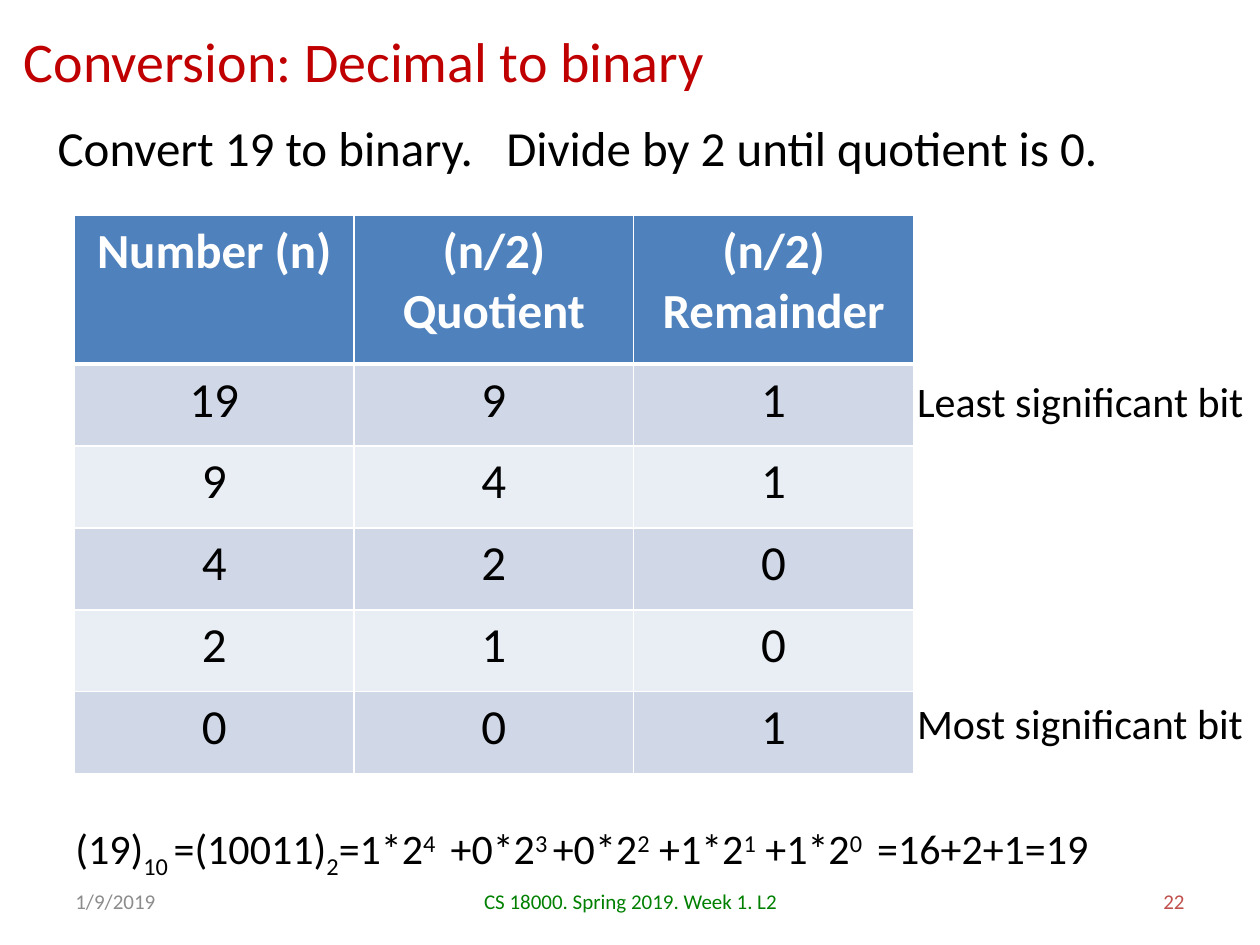
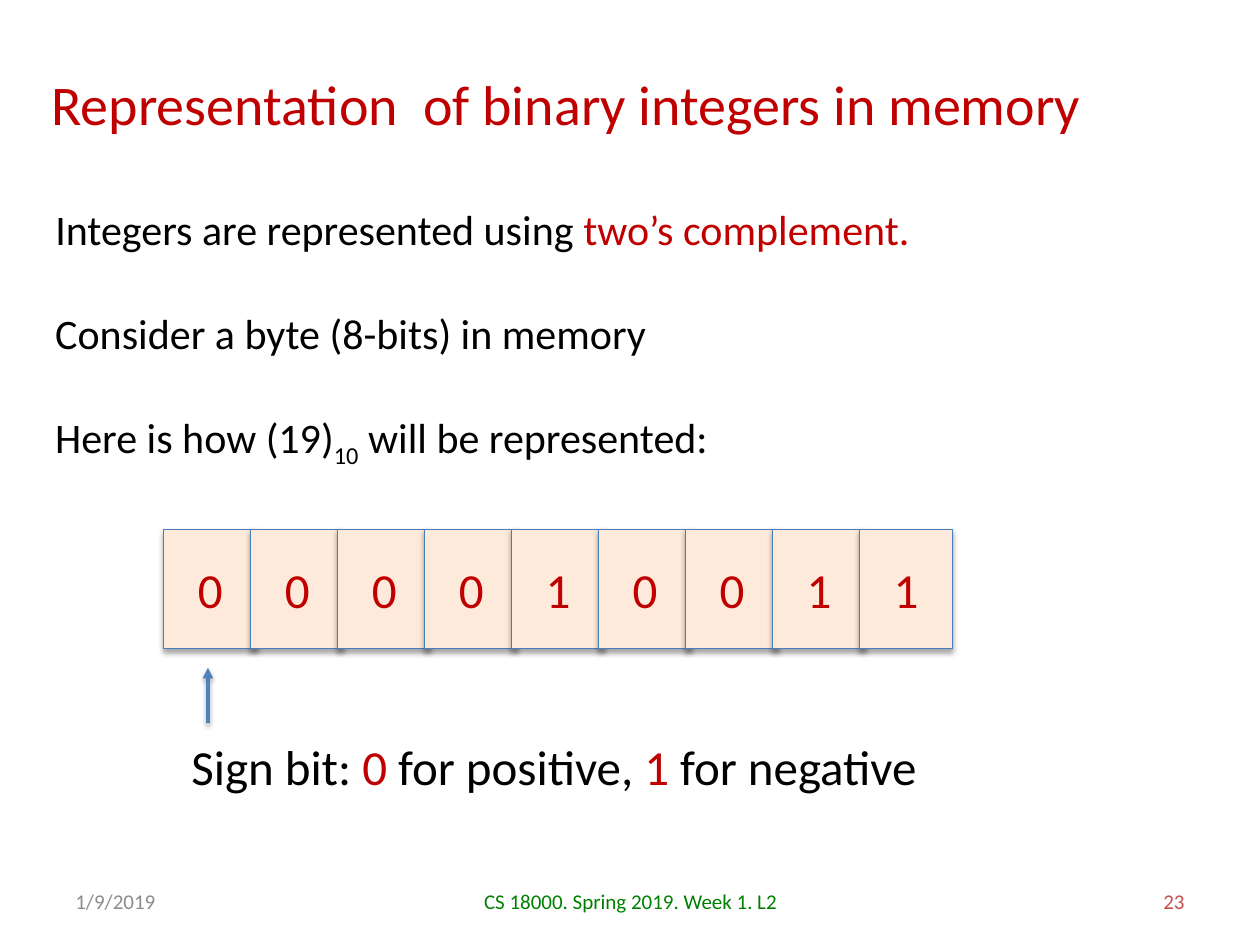
import pptx
import pptx.util
from lxml import etree
from pptx.dml.color import RGBColor
from pptx.enum.shapes import MSO_CONNECTOR, MSO_SHAPE
from pptx.enum.text import MSO_ANCHOR, MSO_AUTO_SIZE, PP_ALIGN
from pptx.oxml.ns import qn
from pptx.util import Inches

FONT = "Calibri"
BLACK = RGBColor(0x00, 0x00, 0x00)
WHITE = RGBColor(0xFF, 0xFF, 0xFF)
RED = RGBColor(0xC0, 0x00, 0x00)
GREEN = RGBColor(0x00, 0x80, 0x00)
GREY = RGBColor(0x8C, 0x8C, 0x8C)
NUMBER_RED = RGBColor(0xC0, 0x50, 0x4D)
BLUE = RGBColor(0x4F, 0x81, 0xBD)
BIT_LINE = RGBColor(0x4B, 0x7E, 0xBC)
BIT_FILL = RGBColor(0xFD, 0xEA, 0xDA)
ROW_FILLS = [RGBColor(0xD0, 0xD8, 0xE8), RGBColor(0xE9, 0xED, 0xF4)]

SUB, SUPER = {"baseline": -25}, {"baseline": 30}
DIVISION_HEADER = ["Number (n)", "(n/2)\nQuotient", "(n/2)\nRemainder"]
DIVISION_STEPS = [(19, 9, 1), (9, 4, 1), (4, 2, 0), (2, 1, 0), (0, 0, 1)]
BITS = "000010011"


def write(frame, text, size=24, color=BLACK, bold=False, align=PP_ALIGN.LEFT):
    """Fill a frame; text is a string, or a list of strings and (string, changes) pairs.

    A newline in a plain string starts a new paragraph.
    """
    lines = [[line] for line in text.split("\n")] if isinstance(text, str) else [text]
    for index, line in enumerate(lines):
        para = frame.add_paragraph() if index else frame.paragraphs[0]
        para.alignment = align
        for part in line:
            words, changes = (part, {}) if isinstance(part, str) else part
            span = para.add_run()
            span.text = words
            span.font.name = FONT
            span.font.size = pptx.util.Pt(size)
            span.font.bold = bold
            span.font.color.rgb = changes.get("color", color)
            if "baseline" in changes:
                span.font._element.set("baseline", str(changes["baseline"] * 1000))


def add_text(shapes, text, left, top, width, height, **style):
    """Add a one-line label that does not wrap."""
    box = shapes.add_textbox(Inches(left), Inches(top), Inches(width), Inches(height))
    box.text_frame.word_wrap = False
    box.text_frame.auto_size = MSO_AUTO_SIZE.SHAPE_TO_FIT_TEXT
    write(box.text_frame, text, **style)


def add_fixed_text(slide, text, left, top, width, height, **style):
    """Add a wrapping box of fixed size with its text in the middle."""
    box = slide.shapes.add_textbox(Inches(left), Inches(top), Inches(width), Inches(height))
    box.text_frame.word_wrap = True
    box.text_frame.vertical_anchor = MSO_ANCHOR.MIDDLE
    write(box.text_frame, text, **style)


def add_slide(deck, title, title_place, number):
    """Add a blank slide with the shared title style and footer."""
    slide = deck.slides.add_slide(deck.slide_layouts[6])
    add_fixed_text(slide, title, *title_place, size=32, color=RED)
    footers = [
        ("1/9/2019", 0.5, 2.33, GREY, PP_ALIGN.LEFT),
        ("CS 18000. Spring 2019. Week 1. L2", 3.42, 3.17, GREEN, PP_ALIGN.CENTER),
        (str(number), 7.17, 2.33, NUMBER_RED, PP_ALIGN.RIGHT),
    ]
    for text, left, width, color, align in footers:
        add_fixed_text(slide, text, left, 6.95, width, 0.4, size=12, color=color, align=align)
    return slide


def add_shadow(shape, opacity, distance):
    """Add a soft shadow below a shape whose line is already set."""
    effects = etree.SubElement(shape._element.spPr, qn("a:effectLst"))
    shadow = etree.SubElement(
        effects, qn("a:outerShdw"), blurRad=str(pptx.util.Pt(3.1)),
        dist=str(pptx.util.Pt(distance)), dir="5400000", rotWithShape="0")
    color = etree.SubElement(shadow, qn("a:srgbClr"), val=str(BLACK))
    etree.SubElement(color, qn("a:alpha"), val=str(opacity * 1000))


def set_borders(cell, **widths):
    """Give a cell white borders of 1 pt, or the width named for a side (L, R, T, B)."""
    properties = cell._tc.get_or_add_tcPr()
    for side in "LRTB":
        line = etree.SubElement(properties, qn("a:ln" + side),
                                w=str(pptx.util.Pt(widths.get(side, 1))))
        fill = etree.SubElement(line, qn("a:solidFill"))
        etree.SubElement(fill, qn("a:srgbClr"), val=str(WHITE))


def add_division_table(slide):
    rows = [DIVISION_HEADER] + DIVISION_STEPS
    table = slide.shapes.add_table(len(rows), 3, Inches(0.59), Inches(1.71),
                                   Inches(6.66), Inches(4.43)).table
    for column in table.columns:
        column.width = Inches(2.22)
    for index, values in enumerate(rows):
        header = index == 0
        table.rows[index].height = Inches(1.18 if header else 0.65)
        borders = {"B": 3} if header else {"T": 3} if index == 1 else {}
        for cell, value in zip(table.rows[index].cells, values):
            set_borders(cell, **borders)
            cell.fill.solid()
            cell.fill.fore_color.rgb = BLUE if header else ROW_FILLS[(index - 1) % 2]
            write(cell.text_frame, str(value), size=28, bold=header,
                  color=WHITE if header else BLACK, align=PP_ALIGN.CENTER)


def add_bit_row(slide):
    group = slide.shapes.add_group_shape()
    for index, bit in enumerate(BITS):
        box = group.shapes.add_shape(MSO_SHAPE.RECTANGLE, Inches(1.3 + 0.69 * index),
                                     Inches(4.2), Inches(0.74), Inches(0.95))
        box.fill.solid()
        box.fill.fore_color.rgb = BIT_FILL
        box.line.color.rgb = BIT_LINE
        box.line.width = pptx.util.Pt(0.75)
        add_shadow(box, 35, 1.8)
        box.text_frame.vertical_anchor = MSO_ANCHOR.MIDDLE
        write(box.text_frame, bit, size=28, color=RED, align=PP_ALIGN.CENTER)


def add_sign_bit_note(slide):
    group = slide.shapes.add_group_shape()
    note = ["Sign bit: ", ("0", {"color": RED}), " for positive, ",
            ("1", {"color": RED}), " for negative"]
    add_text(group.shapes, note, 1.42, 5.8, 6.03, 0.57, size=28)
    arrow = group.shapes.add_connector(MSO_CONNECTOR.STRAIGHT, Inches(1.65), Inches(5.74),
                                       Inches(1.65), Inches(5.3))
    arrow.line.color.rgb = BLUE
    arrow.line.width = pptx.util.Pt(2)
    etree.SubElement(arrow.line._get_or_add_ln(), qn("a:tailEnd"), type="triangle")
    add_shadow(arrow, 38, 1.6)


def build_conversion(deck):
    slide = add_slide(deck, "Conversion: Decimal to binary", (0.09, 0.06, 7.08, 0.84), 22)
    add_division_table(slide)
    add_text(slide.shapes, "Convert 19 to binary.", 0.36, 0.88, 3.54, 0.57, size=28)
    add_text(slide.shapes, "Divide by 2 until quotient is 0.", 3.92, 0.88, 4.95, 0.57, size=28)
    expansion = ["(19)", ("10 ", SUB), "=(10011)", ("2", SUB), "=1*2", ("4 ", SUPER),
                 " +0*2", ("3 ", SUPER), "+0*2", ("2", SUPER), " +1*2", ("1", SUPER),
                 " +1*2", ("0 ", SUPER), " =16+2+1=19"]
    add_text(slide.shapes, expansion, 0.5, 6.48, 8.46, 0.5)
    add_text(slide.shapes, "Least significant bit", 7.18, 2.93, 2.93, 0.5)
    add_text(slide.shapes, "Most significant bit", 7.18, 5.49, 2.81, 0.5)


def build_representation(deck):
    slide = add_slide(deck, "Representation  of binary integers in memory",
                      (0.31, 0.4, 9.02, 0.84), 23)
    statements = [
        (["Integers are represented using ", ("two’s complement.", {"color": RED})], 7.05),
        ("Consider a byte (8-bits) in memory", 4.93),
        (["Here is how (19)", ("10", SUB), " will be represented:"], 5.57),
    ]
    for index, (text, width) in enumerate(statements):
        add_text(slide.shapes, text, 0.34, 1.57 + 0.825 * index, width, 0.5)
    add_bit_row(slide)
    add_sign_bit_note(slide)


def main():
    deck = pptx.Presentation()
    deck.slide_width, deck.slide_height = Inches(10), Inches(7.5)
    build_conversion(deck)
    build_representation(deck)
    deck.save("out.pptx")


if __name__ == "__main__":
    main()
